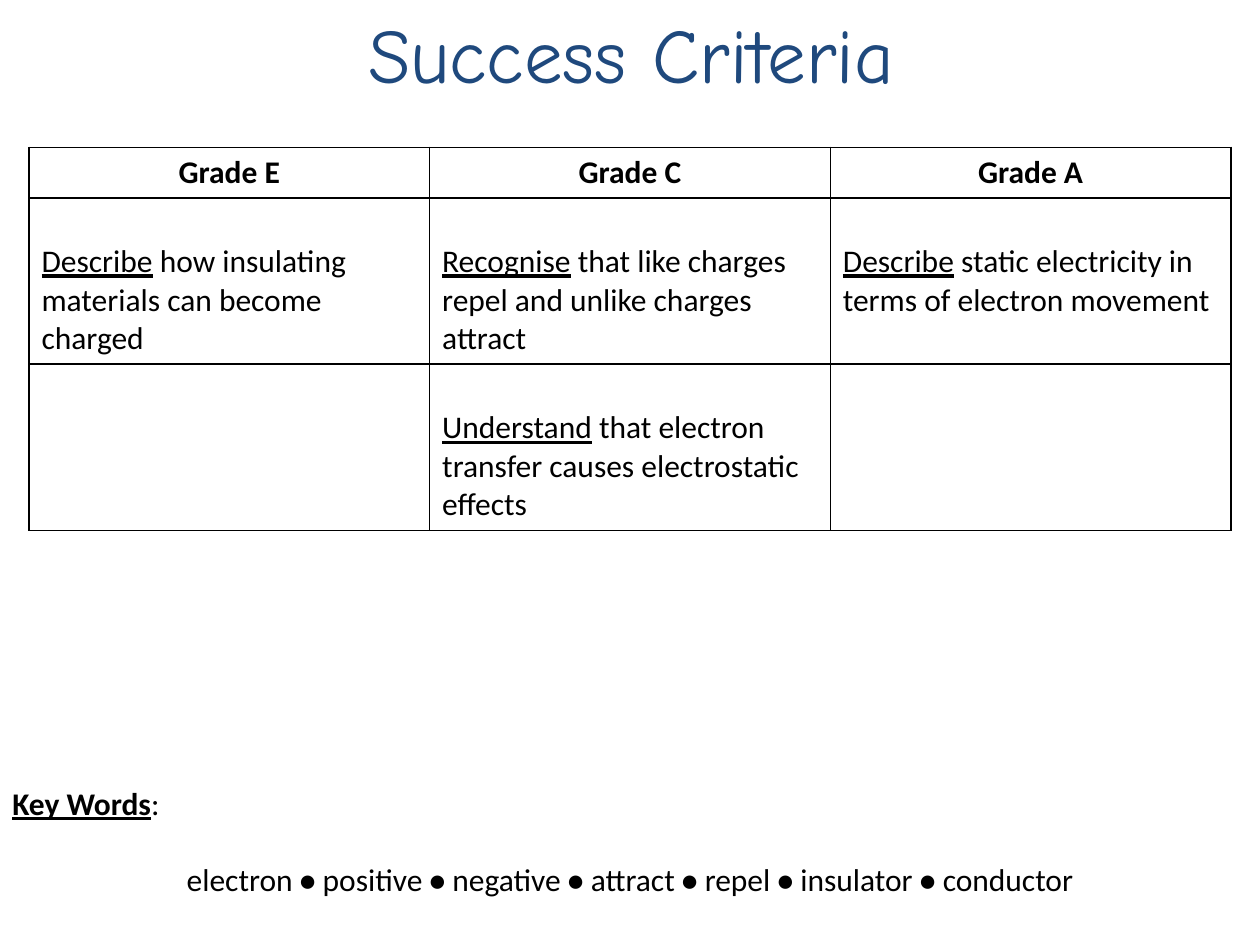
from pptx import Presentation
from pptx.dml.color import RGBColor
from pptx.enum.text import MSO_ANCHOR, PP_ALIGN
from pptx.oxml import parse_xml
from pptx.oxml.ns import nsdecls
from pptx.util import Inches, Pt

COLORS = {"title": "1F497D", "text": "000000", "border": "000000", "cell": "FFFFFF"}
BODY_FONT = "Calibri"
TITLE_FONT = "Comic Neue"
BODY_SIZE = 18
LINE_HEIGHT = 22

HEADERS = ["Grade E", "Grade C", "Grade A"]
CRITERIA = [
    [
        ("Describe", " how insulating materials can become charged"),
        ("Recognise", " that like charges repel and unlike charges attract"),
        ("Describe", " static electricity in terms of electron movement"),
    ],
    [
        None,
        ("Understand", " that electron transfer causes electrostatic effects"),
        None,
    ],
]
KEY_WORDS = ["electron", "positive", "negative", "attract", "repel", "insulator", "conductor"]


class SlideBuilder:
    def __init__(self, s):
        self.s = s

    def run(self, p, text, size=BODY_SIZE, font=BODY_FONT, color="text", bold=False, underline=False):
        r = p.add_run()
        r.text = text
        r.font.size = Pt(size)
        r.font.name = font
        r.font.bold = bold
        r.font.underline = underline
        r.font.color.rgb = RGBColor.from_string(COLORS[color])

    def text_box(self, left, top, width, height):
        sp = self.s.shapes.add_textbox(Inches(left), Inches(top), Inches(width), Inches(height))
        tf = sp.text_frame
        tf.word_wrap = True
        tf.vertical_anchor = MSO_ANCHOR.TOP
        return tf

    def title(self, text):
        p = self.text_box(0.51, 0, 9, 1.25).paragraphs[0]
        p.alignment = PP_ALIGN.CENTER
        self.run(p, text, 44, TITLE_FONT, "title")

    def cell_style(self, cell):
        tcPr = cell._tc.get_or_add_tcPr()
        for side in ("lnL", "lnR", "lnT", "lnB"):
            tcPr.append(parse_xml(
                f'<a:{side} {nsdecls("a")} w="12700"><a:solidFill>'
                f'<a:srgbClr val="{COLORS["border"]}"/></a:solidFill></a:{side}>'))
        cell.fill.solid()
        cell.fill.fore_color.rgb = RGBColor.from_string(COLORS["cell"])

    def criteria_table(self, left, top, col_width, row_heights):
        cols = len(HEADERS)
        frame = self.s.shapes.add_table(
            len(row_heights), cols, Inches(left), Inches(top),
            Inches(col_width * cols), Inches(sum(row_heights)))
        table = frame.table
        for column in table.columns:
            column.width = Inches(col_width)
        for row, height in zip(table.rows, row_heights):
            row.height = Inches(height)
        for cell in table.iter_cells():
            self.cell_style(cell)
        for c, header in enumerate(HEADERS):
            p = table.cell(0, c).text_frame.paragraphs[0]
            p.alignment = PP_ALIGN.CENTER
            self.run(p, header, bold=True)
        for i, criteria in enumerate(CRITERIA, start=1):
            for c, criterion in enumerate(criteria):
                if criterion:
                    cell = table.cell(i, c)
                    cell.margin_top = Inches(0.05) + Pt(LINE_HEIGHT)
                    verb, rest = criterion
                    p = cell.text_frame.paragraphs[0]
                    self.run(p, verb, underline=True)
                    self.run(p, rest)

    def key_words(self, left, top, width, height):
        tf = self.text_box(left, top, width, height)
        p = tf.paragraphs[0]
        self.run(p, "Key Words", bold=True, underline=True)
        self.run(p, ":")
        p = tf.add_paragraph()
        p.alignment = PP_ALIGN.CENTER
        p.space_before = Pt(LINE_HEIGHT)
        for i, word in enumerate(KEY_WORDS):
            if i:
                self.run(p, " • ", bold=True)
            self.run(p, word)


def main():
    prs = Presentation()
    prs.slide_width = Inches(10)
    prs.slide_height = Inches(7.5)
    slide = SlideBuilder(prs.slides.add_slide(prs.slide_layouts[6]))
    slide.title("Success Criteria")
    slide.criteria_table(0.23, 1.17, 3.18, [0.4, 1.32, 1.32])
    slide.key_words(0, 6.17, 10, 1.01)
    prs.save("out.pptx")


if __name__ == "__main__":
    main()
